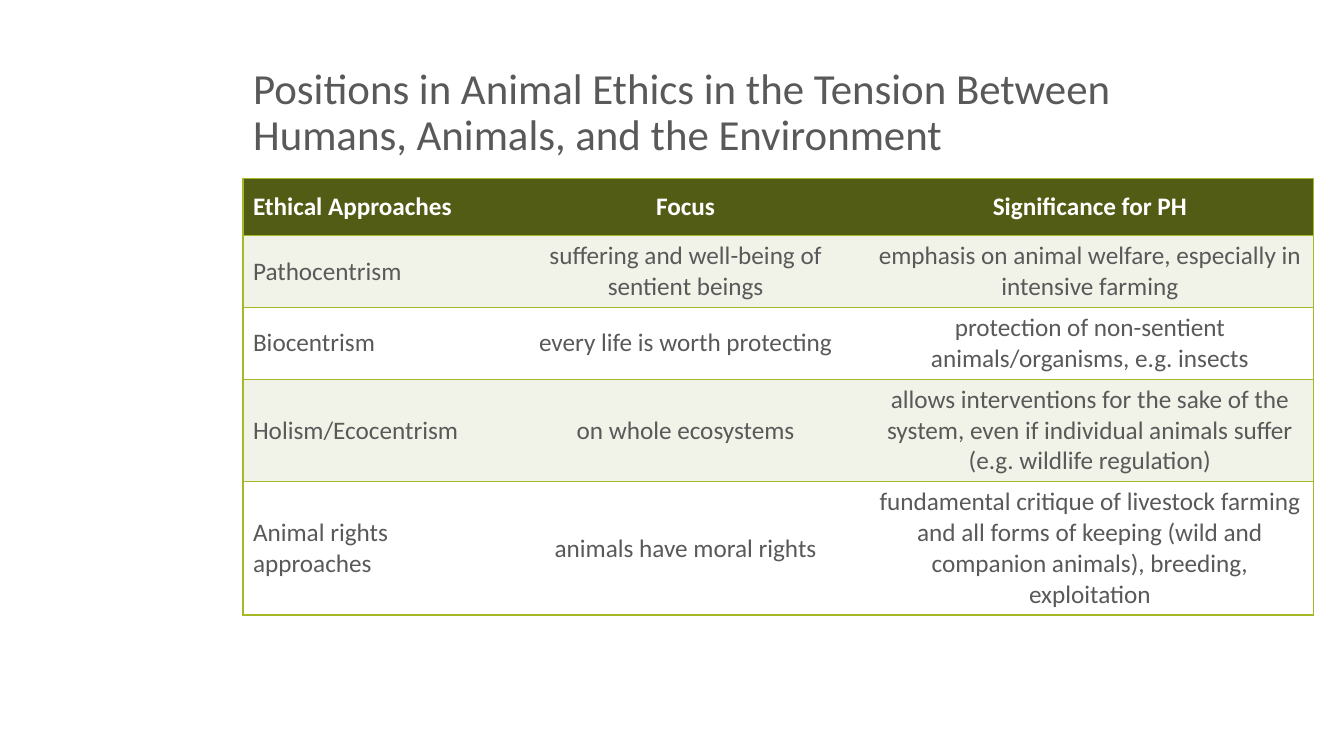
from dataclasses import dataclass

from lxml import etree
from pptx import Presentation
from pptx import util as u
from pptx.dml.color import RGBColor
from pptx.enum import text
from pptx.oxml.ns import qn


@dataclass(frozen=True)
class Theme:
    font: str = "Calibri"
    title_size: float = 30.6
    table_size: float = 18
    ink: str = "595959"
    white: str = "FFFFFF"
    header: str = "535C14"
    band: str = "F1F3E8"
    border: str = "A6B727"
    border_width: float = 1


THEME = Theme()
WIDTH, HEIGHT = 13.33, 7.5
LEFT = 2.41
TITLE = "Positions in Animal Ethics in the Tension Between Humans, Animals, and the Environment"
COLUMN_WIDTHS = [2.6, 3.58, 4.44]
ROW_HEIGHTS = [0.57, 0.71, 0.71, 1.02, 1.32]
APPROACHES = [
    ["Ethical Approaches", "Focus", "Significance for PH"],
    ["Pathocentrism", "suffering and well-being of sentient beings",
     "emphasis on animal welfare, especially in intensive farming"],
    ["Biocentrism", "every life is worth protecting",
     "protection of non-sentient animals/organisms, e.g. insects"],
    ["Holism/Ecocentrism", "on whole ecosystems",
     "allows interventions for the sake of the system, even if individual "
     "animals suffer (e.g. wildlife regulation)"],
    ["Animal rights approaches", "animals have moral rights",
     "fundamental critique of livestock farming and all forms of keeping "
     "(wild and companion animals), breeding, exploitation"],
]


def format_font(paragraph, size, color, bold=False):
    for run in paragraph.runs:
        run.font.name = THEME.font
        run.font.size = u.Pt(size)
        run.font.bold = bold
        run.font.color.rgb = RGBColor.from_string(color)


def add_title(slide):
    title = slide.shapes.title
    title.left, title.top = u.Inches(LEFT), u.Inches(0.33)
    title.width, title.height = u.Inches(10.25), u.Inches(1.31)
    frame = title.text_frame
    frame.text = TITLE
    frame.word_wrap = True
    frame.auto_size = text.MSO_AUTO_SIZE.NONE
    frame.vertical_anchor = text.MSO_ANCHOR.BOTTOM
    paragraph = frame.paragraphs[0]
    paragraph.alignment = text.PP_ALIGN.LEFT
    paragraph.line_spacing = 0.9
    format_font(paragraph, THEME.title_size, THEME.ink)


def set_borders(cell, visible_sides):
    """Draw the named sides (L, R, T, B) and clear the others; call before filling."""
    properties = cell._tc.get_or_add_tcPr()
    for side in "LRTB":
        line = etree.SubElement(properties, qn(f"a:ln{side}"), w=str(u.Pt(THEME.border_width)))
        if side in visible_sides:
            fill = etree.SubElement(line, qn("a:solidFill"))
            etree.SubElement(fill, qn("a:srgbClr"), val=THEME.border)
        else:
            etree.SubElement(line, qn("a:noFill"))


def format_cell(cell, row, column):
    is_header = row == 0
    sides = "TB" + {0: "L", len(COLUMN_WIDTHS) - 1: "R"}.get(column, "")
    set_borders(cell, sides)
    cell.fill.solid()
    background = THEME.header if is_header else THEME.band if row % 2 else THEME.white
    cell.fill.fore_color.rgb = RGBColor.from_string(background)
    cell.vertical_anchor = text.MSO_ANCHOR.MIDDLE
    paragraph = cell.text_frame.paragraphs[0]
    paragraph.alignment = text.PP_ALIGN.CENTER if column else text.PP_ALIGN.LEFT
    format_font(paragraph, THEME.table_size, THEME.white if is_header else THEME.ink, is_header)


def add_approaches_table(slide):
    table = slide.shapes.add_table(
        len(ROW_HEIGHTS), len(COLUMN_WIDTHS), u.Inches(LEFT), u.Inches(1.77),
        u.Inches(sum(COLUMN_WIDTHS)), u.Inches(sum(ROW_HEIGHTS))).table
    table.horz_banding = False
    for column, width in zip(table.columns, COLUMN_WIDTHS):
        column.width = u.Inches(width)
    for row, height in zip(table.rows, ROW_HEIGHTS):
        row.height = u.Inches(height)
    for row, words in enumerate(APPROACHES):
        for column, word in enumerate(words):
            cell = table.cell(row, column)
            cell.text_frame.text = word
            format_cell(cell, row, column)


def main():
    presentation = Presentation()
    presentation.slide_width = u.Inches(WIDTH)
    presentation.slide_height = u.Inches(HEIGHT)
    title_only = presentation.slide_layouts.get_by_name("Title Only")
    slide = presentation.slides.add_slide(title_only)
    add_title(slide)
    add_approaches_table(slide)
    presentation.save("out.pptx")


if __name__ == "__main__":
    main()
